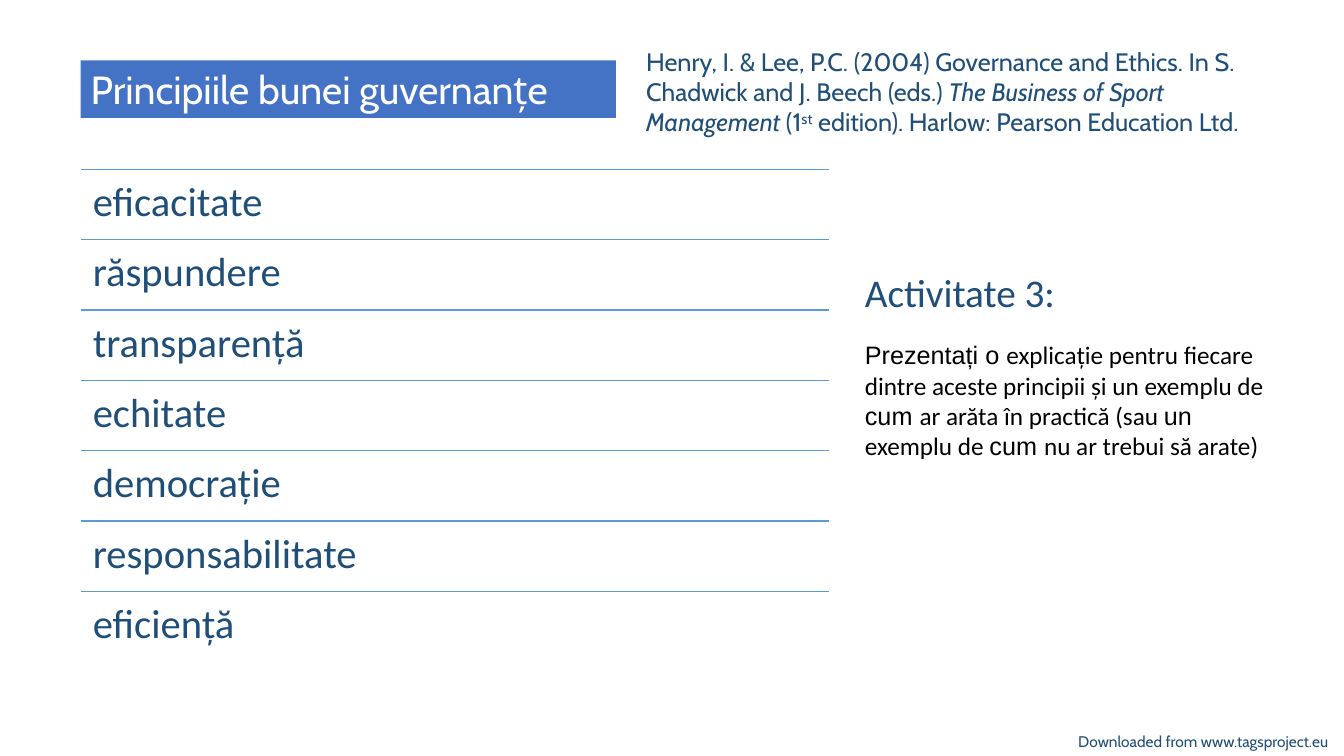
from lxml import etree
from pptx import Presentation
from pptx.dml.color import RGBColor
from pptx.enum import shapes, text
from pptx.oxml import ns
from pptx.util import Inches, Pt

WHITE = RGBColor(0xFF, 0xFF, 0xFF)
BLACK = RGBColor(0x00, 0x00, 0x00)
NAVY = RGBColor(0x1F, 0x4E, 0x79)
BANNER_BLUE = RGBColor(0x44, 0x72, 0xC4)
RULE_BLUE = RGBColor(0x5B, 0x9B, 0xD5)

PRINCIPLES = ["eficacitate", "răspundere", "transparență", "echitate",
              "democrație", "responsabilitate", "eficiență"]
LIST_LEFT, LIST_TOP, LIST_WIDTH, ROW_HEIGHT = 0.8, 1.68, 7.42, 0.7
ROW_STEP = 0.698

ITALIC = {"italic": True}
ARIAL = {"name": "Arial"}
CITATION = [
    ("Henry, I. & Lee, P.C. (2004) Governance and Ethics. In S. "
     "Chadwick and J. Beech (eds.) ", {}),
    ("The Business of Sport Management", ITALIC),
    (" (1", {}),
    ("st", {"baseline": "30000"}),
    (" edition). Harlow: Pearson Education Ltd.", {}),
]
TASK = [
    ("Prezentați o ", ARIAL),
    ("explicație pentru fiecare dintre aceste principii și un exemplu de ", {}),
    ("cum ", ARIAL),
    ("ar arăta în practică (sau ", {}),
    ("un", ARIAL),
    (" exemplu de ", {}),
    ("cum ", ARIAL),
    ("nu ar trebui să arate)", {}),
]


def set_all(target, values):
    for name, value in values.items():
        setattr(target, name, value)


def write_spans(para, spans, font, size, color):
    """Add runs in a shared format, each with its own overrides."""
    for words, overrides in spans:
        span = para.add_run()
        span.text = words
        values = {"name": font, "size": Pt(size), **overrides}
        baseline = values.pop("baseline", None)
        set_all(span.font, values)
        span.font.color.rgb = color
        if baseline:
            span.font._element.set("baseline", baseline)


def add_title(page, words):
    title = page.shapes.title
    set_all(title, {"left": Inches(0.8), "top": Inches(0.6),
                    "width": Inches(5.31), "height": Inches(0.57)})
    title.fill.solid()
    title.fill.fore_color.rgb = BANNER_BLUE
    set_all(title.text_frame, {"word_wrap": True,
                               "auto_size": text.MSO_AUTO_SIZE.NONE,
                               "vertical_anchor": text.MSO_ANCHOR.TOP})
    para = title.text_frame.paragraphs[0]
    para.alignment = text.PP_ALIGN.LEFT
    write_spans(para, [(words, {})], "Cabin", 28, WHITE)


def add_text(page, place, spans, font, size, color=NAVY, inset=None, **layout):
    """Add a wrapped one-paragraph box; layout holds paragraph settings."""
    box = page.shapes.add_textbox(*map(Inches, place))
    frame = box.text_frame
    frame.word_wrap = True
    if inset is not None:
        sides = ("left", "top", "right", "bottom")
        set_all(frame, {f"margin_{side}": Inches(inset) for side in sides})
    para = frame.paragraphs[0]
    set_all(para, layout)
    write_spans(para, spans, font, size, color)


def add_rule(page, left, top, width):
    rule = page.shapes.add_connector(
        shapes.MSO_CONNECTOR.STRAIGHT,
        Inches(left), Inches(top), Inches(left + width), Inches(top))
    rule.line.color.rgb = RULE_BLUE
    rule.line.width = Pt(1)
    etree.SubElement(rule._element.spPr, ns.qn("a:effectLst"))


def add_principles(page):
    for index, principle in enumerate(PRINCIPLES):
        top = LIST_TOP + index * ROW_STEP
        add_rule(page, LIST_LEFT, top, LIST_WIDTH)
        add_text(page, (LIST_LEFT, top, LIST_WIDTH, ROW_HEIGHT),
                 [(principle, {})], "Calibri", 29, inset=0.12, line_spacing=0.9)


def main():
    deck = Presentation()
    set_all(deck, {"slide_width": Inches(13.33), "slide_height": Inches(7.5)})
    page = deck.slides.add_slide(deck.slide_layouts.get_by_name("Title Only"))
    add_title(page, "Principiile bunei guvernanțe")
    add_text(page, (6.31, 0.41, 6.67, 1.01), CITATION, "Cabin", 18)
    add_text(page, (8.48, 3.32, 4.29, 1.62), TASK, "Calibri", 18, BLACK)
    add_principles(page)
    add_text(page, (8.48, 2.61, 2.9, 0.57), [("Activitate 3:", {})], "Calibri", 28)
    add_text(page, (10.54, 7.21, 2.79, 0.29),
             [("Downloaded from www.tagsproject.eu", {})], "Cabin", 11,
             alignment=text.PP_ALIGN.CENTER)
    deck.save("out.pptx")


if __name__ == "__main__":
    main()
